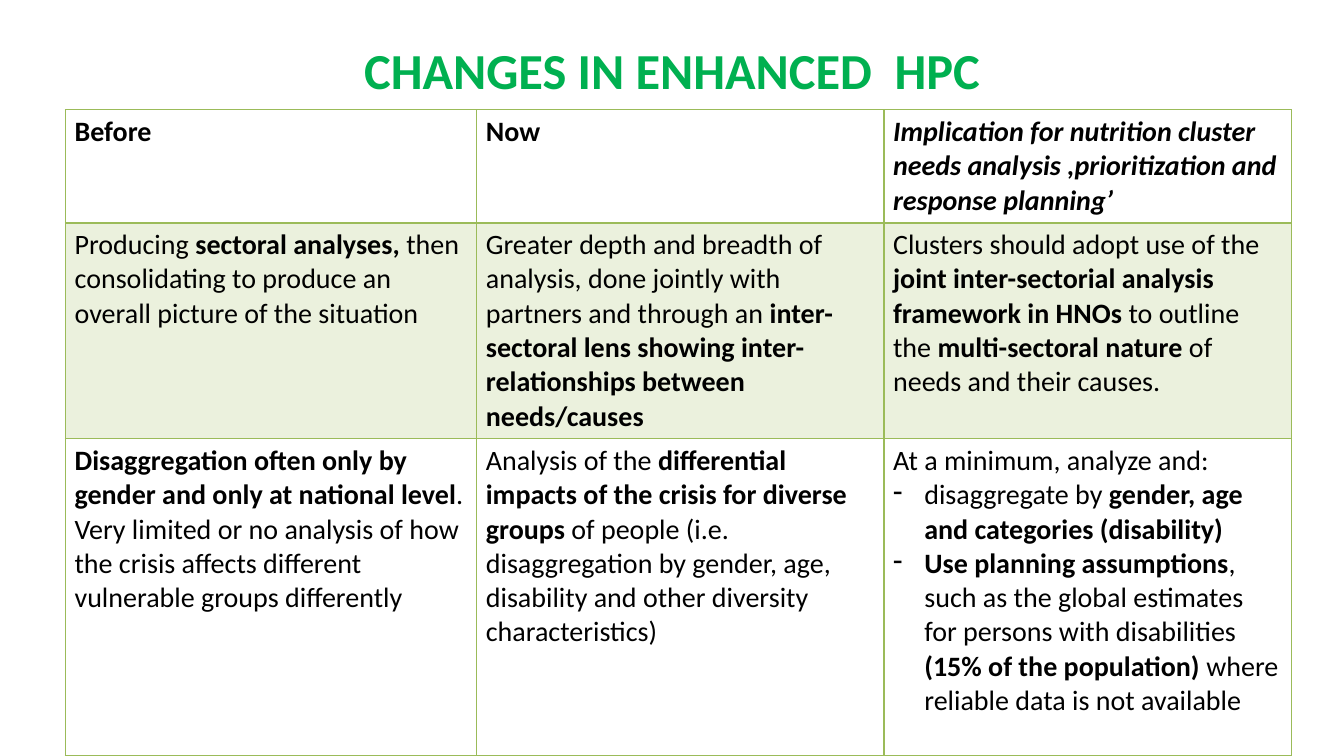
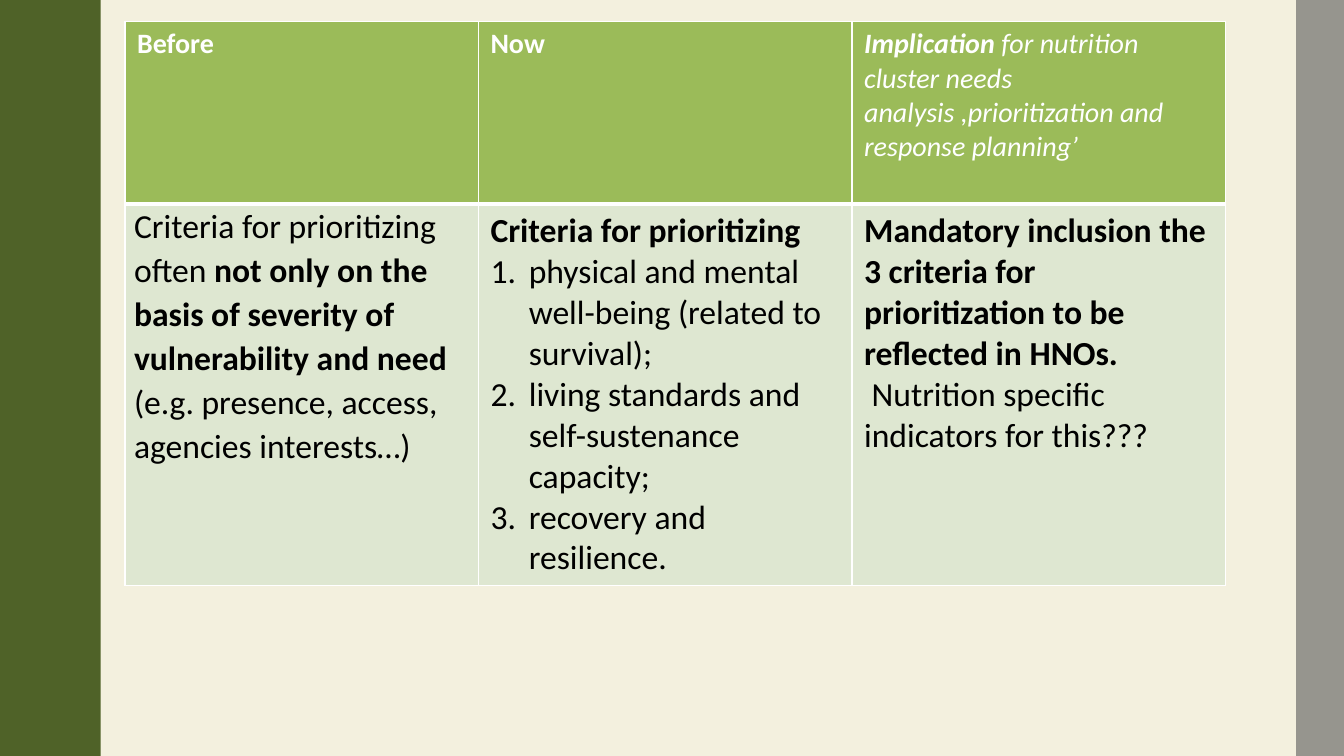
from lxml import etree
from pptx import Presentation
from pptx.dml.color import RGBColor
from pptx.enum.shapes import MSO_SHAPE
from pptx.enum.text import MSO_ANCHOR, PP_ALIGN
from pptx.oxml.ns import qn
from pptx.util import Inches, Pt

RECT = MSO_SHAPE.RECTANGLE
MID = MSO_ANCHOR.MIDDLE
TOP = MSO_ANCHOR.TOP
CENTER = PP_ALIGN.CENTER
LEFT = PP_ALIGN.LEFT

WIDE, HIGH = Inches(13.33), Inches(7.5)
FONT = "Calibri"
HUES = {
    "title": "00B050", "text": "000000", "white": "FFFFFF",
    "green": "9BBB59", "pale": "DEE7D1", "cream": "F3F0DE",
    "olive": "4F6228", "gray": "595959",
}
TIGHT = {"margin_left": 0.09, "margin_right": 0.09, "margin_top": 0.05, "margin_bottom": 0.05}
LOOSE = {"margin_left": 0.12, "margin_right": 0.12, "margin_top": 0.06, "margin_bottom": 0.06}
FLAT = {**TIGHT, "margin_top": 0, "margin_bottom": 0}
MARKS = {"- ": ("buChar", {"char": "-"}), "# ": ("buAutoNum", {"type": "arabicPeriod"})}

CHANGES = [
    ["*Before*", "*Now*",
     "*Implication for nutrition cluster needs analysis ,prioritization and response planning’*"],
    ["Producing *sectoral analyses, *then consolidating to produce an overall picture of the situation",
     "Greater depth and breadth of analysis, done jointly with partners and through an "
     "*inter-sectoral lens showing inter-relationships between needs/causes*",
     "Clusters should adopt use of the *joint inter-sectorial analysis framework in HNOs *"
     "to outline the *multi-sectoral nature *of needs and their causes."],
    ["*Disaggregation often only by gender and only at national level*. Very limited or no "
     "analysis of how the crisis affects different vulnerable groups differently",
     "Analysis of the *differential impacts of the crisis for diverse groups *of people "
     "(i.e. disaggregation by gender, age, disability and other diversity characteristics)",
     "At a minimum, analyze and:\n"
     "- disaggregate by *gender, age and categories (disability)*\n"
     "- *Use planning assumptions*, such as the global estimates for persons with disabilities "
     "*(15% of the population) *where reliable data is not available"],
]
CRITERIA = [
    ["*Before*", "*Now*",
     "*Implication *for nutrition cluster needs analysis ,prioritization and response planning’"],
    ["Criteria for prioritizing often *not only on the basis of severity of vulnerability "
     "and need *(e.g. presence, access, agencies interests…)",
     "*Criteria for prioritizing*\n"
     "# physical and mental well-being (related to survival);\n"
     "# living standards and self-sustenance capacity;\n"
     "# recovery and resilience.",
     "*Mandatory inclusion the 3 criteria for prioritization to be reflected in HNOs.*\n"
     " Nutrition specific indicators for this???"],
]


def across(share):
    return round(WIDE * share / 100)


def down(share):
    return round(HIGH * share / 100)


def color(name):
    return RGBColor.from_string(HUES[name])


def apply(item, values):
    for key, value in values.items():
        setattr(item, key, value)


def style(font, size, hue, bold=False, italic=False):
    apply(font, {"name": FONT, "size": Pt(size), "bold": bold, "italic": italic})
    font.color.rgb = color(hue)


def paint(fill, hue, share=100):
    if hue is None:
        fill.background()
        return
    fill.solid()
    fill.fore_color.rgb = color(hue)
    if share < 100:
        node = fill._xPr.find(qn("a:solidFill"))[0]
        etree.SubElement(node, qn("a:alpha"), val=str(share * 1000))


def mark(para, sign, indent):
    props = para._p.get_or_add_pPr()
    props.set("marL", str(Inches(indent)))
    props.set("indent", str(-Inches(indent)))
    tag, values = MARKS[sign]
    etree.SubElement(props, qn("a:" + tag), **values)


def write(frame, text, look, indent, space):
    for row, line in enumerate(text.split("\n")):
        para = frame.add_paragraph() if row else frame.paragraphs[0]
        apply(para, {"alignment": LEFT, "line_spacing": space})
        if line[:2] in MARKS:
            mark(para, line[:2], indent)
            line = line[2:]
        for pos, part in enumerate(line.split("*")):
            if part:
                run = para.add_run()
                run.text = part
                style(run.font, **look, bold=pos % 2 == 1)


def edge(cell, hue, top, base):
    props = cell._tc.get_or_add_tcPr()
    sides = {"lnL": 1, "lnR": 1, "lnT": top, "lnB": base}
    for pos, (side, width) in enumerate(sides.items()):
        line = etree.Element(qn("a:" + side), w=str(Pt(width)))
        fill = etree.SubElement(line, qn("a:solidFill"))
        etree.SubElement(fill, qn("a:srgbClr"), val=HUES[hue])
        props.insert(pos, line)


def grid(slide, data, left, top, cols, rows, form):
    table = slide.shapes.add_table(
        len(rows), len(cols), across(left), down(top), across(sum(cols)), down(sum(rows))).table
    apply(table, {"first_row": False, "horz_banding": False})
    for col, share in zip(table.columns, cols):
        col.width = across(share)
    for row, share in zip(table.rows, rows):
        row.height = down(share)
    for r, texts in enumerate(data):
        for c, text in enumerate(texts):
            cell = table.cell(r, c)
            inset, space = form["odd"].get((r, c), (form["inset"], 1))
            apply(cell, {key: Inches(size) for key, size in inset.items()})
            cell.vertical_anchor = TOP
            paint(cell.fill, *form["fills"][r])
            look = form["body"] if r else {**form["head"], "italic": c == 2}
            write(cell.text_frame, text, look, form["indent"], space)
            rule = form["rule"]
            edge(cell, form["line"], rule if r == 1 else 1, 1 if r else rule)


def band(slide, left, width, hue, share=100):
    bar = slide.shapes.add_shape(RECT, across(left), 0, across(width), HIGH)
    bar.shadow.inherit = False
    paint(bar.fill, hue, share)
    bar.line.fill.background()


def head(slide, text):
    title = slide.shapes.title
    apply(title, {"left": across(6.9), "top": down(3), "width": across(86.25), "height": down(13.33)})
    frame = title.text_frame
    apply(frame, {"text": text, "vertical_anchor": MID, "word_wrap": True})
    para = frame.paragraphs[0]
    apply(para, {"alignment": CENTER, "line_spacing": 0.9})
    style(para.runs[0].font, 36, "title", bold=True)


def page(deck, layout, hue):
    slide = deck.slides.add_slide(deck.slide_layouts[layout])
    paint(slide.background.fill, hue)
    return slide


def main():
    deck = Presentation()
    apply(deck, {"slide_width": WIDE, "slide_height": HIGH})

    slide = page(deck, 5, "white")
    head(slide, "CHANGES IN ENHANCED  HPC")
    plain = {"size": 20, "hue": "text"}
    grid(slide, CHANGES, 4.88, 14.53, [30.6, 30.3, 30.3], [14.8, 28.4, 41.87], {
        "head": plain, "body": plain, "inset": TIGHT, "odd": {}, "indent": 0.31,
        "fills": [(None,), ("green", 20), (None,)], "line": "green", "rule": 2})

    slide = page(deck, 6, "cream")
    band(slide, 0, 7.5, "olive")
    band(slide, 96.45, 3.55, "gray", 60)
    grid(slide, CRITERIA, 9.3, 2.8, [26.3, 27.8, 27.8], [24.2, 50.4], {
        "head": {"size": 20, "hue": "white"}, "body": {"size": 24, "hue": "text"},
        "inset": LOOSE, "odd": {(1, 0): (FLAT, 1.07)}, "indent": 0.38,
        "fills": [("green",), ("pale",)], "line": "white", "rule": 3})

    deck.save("out.pptx")


if __name__ == "__main__":
    main()
